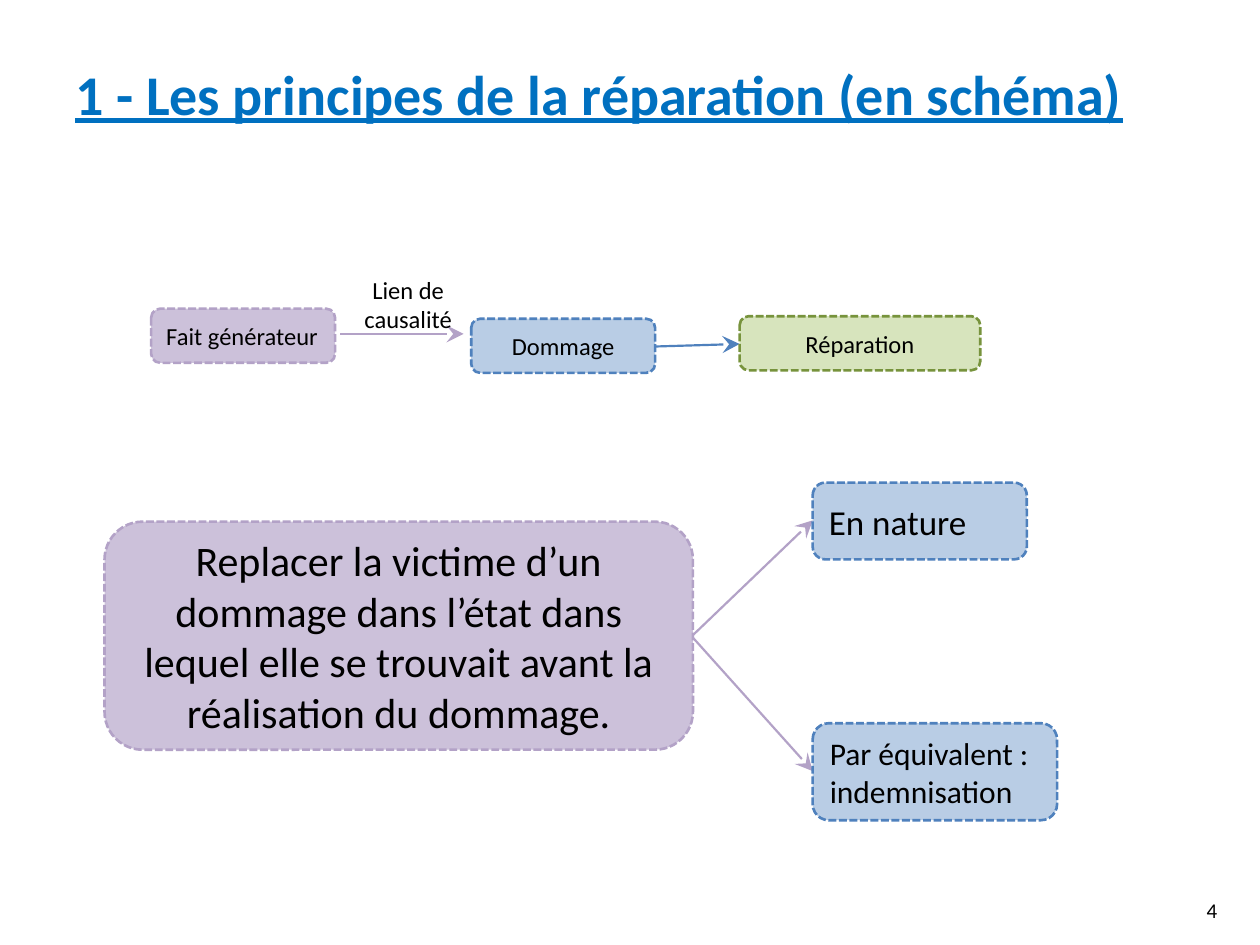
from dataclasses import dataclass
from typing import Optional

from lxml import etree
from pptx import Presentation
from pptx.dml.color import RGBColor
from pptx.enum import dml, shapes, text
from pptx.oxml import ns
from pptx.util import Inches, Pt

FONT = "Calibri"
BLACK = RGBColor(0x00, 0x00, 0x00)
TITLE_BLUE = RGBColor(0x00, 0x70, 0xC0)
LILAC = RGBColor(0xCC, 0xC1, 0xDA)
PURPLE = RGBColor(0xB3, 0xA2, 0xC7)
PALE_BLUE = RGBColor(0xB9, 0xCD, 0xE5)
BLUE = RGBColor(0x4F, 0x81, 0xBD)
PALE_GREEN = RGBColor(0xD7, 0xE4, 0xBD)
GREEN = RGBColor(0x77, 0x93, 0x3C)

LEFT, CENTER, RIGHT = text.PP_ALIGN.LEFT, text.PP_ALIGN.CENTER, text.PP_ALIGN.RIGHT
TOP, MIDDLE = text.MSO_ANCHOR.TOP, text.MSO_ANCHOR.MIDDLE


@dataclass(frozen=True)
class Palette:
    fill: RGBColor
    line: RGBColor


PURPLE_BOX = Palette(LILAC, PURPLE)
BLUE_BOX = Palette(PALE_BLUE, BLUE)
GREEN_BOX = Palette(PALE_GREEN, GREEN)


@dataclass(frozen=True)
class Box:
    lines: tuple[str, ...]
    left: float
    top: float
    width: float
    height: float
    size: int
    palette: Optional[Palette] = None
    align: text.PP_ALIGN = CENTER


@dataclass(frozen=True)
class Arrow:
    start: tuple[float, float]
    end: tuple[float, float]
    color: RGBColor


BOXES = [
    Box(("Replacer la victime d’un dommage dans l’état dans",
         "lequel elle se trouvait avant la réalisation du dommage."),
        0.83, 4.14, 4.67, 1.81, 24, PURPLE_BOX),
    Box(("Par équivalent : indemnisation",), 6.45, 5.74, 1.94, 0.77, 18, BLUE_BOX, LEFT),
    Box(("En nature",), 6.45, 3.83, 1.7, 0.61, 20, BLUE_BOX, LEFT),
    Box(("Réparation",), 5.87, 2.51, 1.91, 0.43, 14, GREEN_BOX),
    Box(("Fait générateur",), 1.2, 2.45, 1.46, 0.43, 14, PURPLE_BOX, LEFT),
    Box(("Dommage",), 3.74, 2.53, 1.46, 0.43, 14, BLUE_BOX),
    Box(("Lien de causalité",), 2.74, 2.2, 1, 0.43, 14),
]

ARROWS = [
    Arrow((5.49, 5.05), (6.45, 6.12), PURPLE),
    Arrow((5.49, 5.05), (6.45, 4.13), PURPLE),
    Arrow((5.2, 2.75), (5.87, 2.73), BLUE),
    Arrow((2.7, 2.65), (3.68, 2.65), PURPLE),
]


def write(sp, lines: tuple[str, ...], size: int, align, anchor,
          color: RGBColor = BLACK, heading: bool = False) -> None:
    tf = sp.text_frame
    tf.word_wrap = True
    tf.vertical_anchor = anchor
    for i, line in enumerate(lines):
        p = tf.add_paragraph() if i else tf.paragraphs[0]
        p.alignment = align
        r = p.add_run()
        r.text = line
        r.font.name = FONT
        r.font.size = Pt(size)
        r.font.color.rgb = color
        r.font.bold = heading
        r.font.underline = heading


def add_box(s, box: Box) -> None:
    sp = s.shapes.add_shape(
        shapes.MSO_SHAPE.ROUNDED_RECTANGLE,
        Inches(box.left), Inches(box.top), Inches(box.width), Inches(box.height))
    sp.shadow.inherit = False
    if box.palette:
        sp.fill.solid()
        sp.fill.fore_color.rgb = box.palette.fill
        sp.line.color.rgb = box.palette.line
        sp.line.width = Pt(1.5)
        sp.line.dash_style = dml.MSO_LINE.SQUARE_DOT
    else:
        sp.fill.background()
        sp.line.fill.background()
    write(sp, box.lines, box.size, box.align, MIDDLE)


def add_arrow(s, arrow: Arrow) -> None:
    ends = [Inches(v) for v in (*arrow.start, *arrow.end)]
    cx = s.shapes.add_connector(shapes.MSO_CONNECTOR.STRAIGHT, *ends)
    cx.line.color.rgb = arrow.color
    cx.line.width = Pt(1.25)
    etree.SubElement(cx.line._get_or_add_ln(), ns.qn("a:tailEnd"),
                     type="stealth", w="lg", len="lg")
    etree.SubElement(cx._element.spPr, ns.qn("a:effectLst"))


def add_label(s, line: str, left: float, top: float, width: float, height: float,
              size: int, **style) -> None:
    sp = s.shapes.add_textbox(Inches(left), Inches(top), Inches(width), Inches(height))
    write(sp, (line,), size, **style)


def main() -> None:
    prs = Presentation()
    prs.slide_width, prs.slide_height = Inches(10), Inches(7.5)
    s = prs.slides.add_slide(prs.slide_layouts[6])
    add_label(s, "1 - Les principes de la réparation (en schéma)", 0.5, 0.42, 9, 0.87, 32,
              align=LEFT, anchor=TOP, color=TITLE_BLUE, heading=True)
    add_label(s, "4", 7.43, 7.02, 2.33, 0.4, 12, align=RIGHT, anchor=MIDDLE)
    for arrow in ARROWS:
        add_arrow(s, arrow)
    for box in BOXES:
        add_box(s, box)
    prs.save("out.pptx")


if __name__ == "__main__":
    main()
